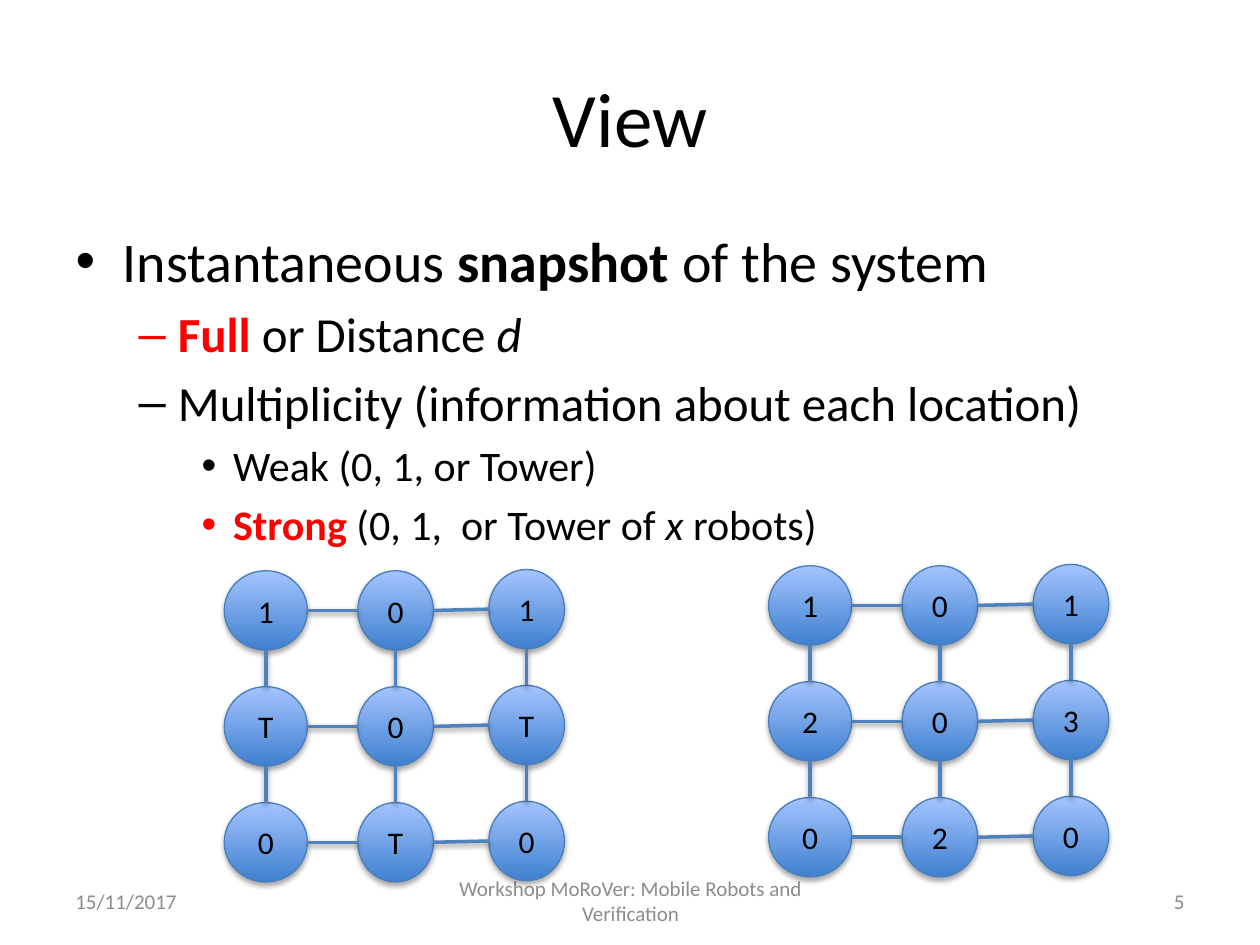
"""Build the slide on robot views: a bulleted outline above two grids of labelled nodes."""
from lxml import etree
from pptx import Presentation, util as u
from pptx.dml.color import RGBColor
from pptx.enum import shapes, text
from pptx.oxml import ns

BLACK = RGBColor(0x00, 0x00, 0x00)
RED = RGBColor(0xFF, 0x00, 0x00)
GREY = RGBColor(0x8C, 0x8C, 0x8C)
NODE_LOW = RGBColor(0x3F, 0x80, 0xCE)
NODE_HIGH = RGBColor(0xA4, 0xC4, 0xFF)
NODE_LINE = RGBColor(0x4B, 0x7E, 0xBC)
EDGE = RGBColor(0x4F, 0x81, 0xBD)
FONT = "Calibri"

COLUMNS = [(0, 0, 0.66), (1.06, 0, 0.6), (2.1, -0.01, 0.6)]
ROW_STEP = 0.92
NODE_HEIGHT = 0.63

OUTLINE = [
    (0, 32, [("Instantaneous ", ""), ("snapshot", "b"), (" of the system", "")]),
    (1, 28, [("Full ", "br"), ("or Distance ", ""), ("d", "i")]),
    (1, 28, [("Multiplicity (information about each location)", "")]),
    (2, 24, [("Weak (0, 1, or Tower)", "")]),
    (2, 24, [("Strong ", "br"), ("(0, 1,  or Tower of", ""), (" x ", "i"), ("robots)", "")]),
]
VIEWS = [
    (6.1, 4.49, ["101", "203", "020"]),
    (1.78, 4.53, ["101", "T0T", "0T0"]),
]
FOOTERS = [
    (0.5, 2.33, "15/11/2017", text.PP_ALIGN.LEFT),
    (3.42, 3.17, "Workshop MoRoVer: Mobile Robots and Verification", text.PP_ALIGN.CENTER),
    (7.17, 2.33, "5", text.PP_ALIGN.RIGHT),
]


def place(shape, left, top, width, height):
    shape.left, shape.top = u.Inches(left), u.Inches(top)
    shape.width, shape.height = u.Inches(width), u.Inches(height)


def style(font, size, color):
    font.name, font.size, font.color.rgb = FONT, u.Pt(size), color


def add_shadow(shape, alpha, distance):
    effects = etree.SubElement(shape._element.spPr, ns.qn("a:effectLst"))
    shadow = etree.SubElement(effects, ns.qn("a:outerShdw"), blurRad="40000",
                              dist=str(u.Pt(distance)), dir="5400000", rotWithShape="0")
    color = etree.SubElement(shadow, ns.qn("a:srgbClr"), val=str(BLACK))
    etree.SubElement(color, ns.qn("a:alpha"), val=str(alpha * 1000))


def fill_title(s, title):
    sp = s.shapes.title
    place(sp, 0.5, 0.3, 9, 1.25)
    sp.text_frame.text = title
    style(sp.text_frame.paragraphs[0].font, 44, BLACK)


def fill_outline(s):
    sp = s.placeholders[1]
    place(sp, 0.5, 1.75, 9, 2.84)
    tf = sp.text_frame
    tf.auto_size = text.MSO_AUTO_SIZE.NONE
    for i, (level, size, runs) in enumerate(OUTLINE):
        p = tf.add_paragraph() if i else tf.paragraphs[0]
        p.level = level
        for words, marks in runs:
            r = p.add_run()
            r.text = words
            style(r.font, size, RED if "r" in marks else BLACK)
            r.font.bold, r.font.italic = "b" in marks, "i" in marks


def add_footer(s, left, width, words, align):
    sp = s.shapes.add_textbox(0, 0, 0, 0)
    place(sp, left, 6.95, width, 0.4)
    tf = sp.text_frame
    tf.word_wrap = True
    tf.vertical_anchor = text.MSO_ANCHOR.MIDDLE
    p = tf.paragraphs[0]
    p.text, p.alignment = words, align
    style(p.font, 12, GREY)


def add_node(s, left, top, width, label):
    sp = s.shapes.add_shape(shapes.MSO_SHAPE.OVAL, 0, 0, 0, 0)
    place(sp, left, top, width, NODE_HEIGHT)
    sp.fill.gradient()
    sp.fill.gradient_angle = 90
    for stop, color in zip(sp.fill.gradient_stops, (NODE_LOW, NODE_HIGH)):
        stop.color.rgb = color
    sp.line.color.rgb, sp.line.width = NODE_LINE, u.Pt(0.75)
    add_shadow(sp, 35, 1.8)
    tf = sp.text_frame
    tf.vertical_anchor = text.MSO_ANCHOR.MIDDLE
    p = tf.paragraphs[0]
    p.text, p.alignment = label, text.PP_ALIGN.CENTER
    style(p.font, 18, BLACK)
    return sp


def add_edge(s, x1, y1, x2, y2):
    line = s.shapes.add_connector(shapes.MSO_CONNECTOR.STRAIGHT, x1, y1, x2, y2)
    line.line.color.rgb, line.line.width = EDGE, u.Pt(2)
    add_shadow(line, 38, 1.6)


def join_across(s, a, b):
    add_edge(s, a.left + a.width, a.top + a.height // 2, b.left, b.top + b.height // 2)


def join_down(s, a, b):
    add_edge(s, a.left + a.width // 2, a.top + a.height, b.left + b.width // 2, b.top)


def add_view(s, left, top, labels):
    rows = [[add_node(s, left + dx, top + i * ROW_STEP + dy, width, label)
             for (dx, dy, width), label in zip(COLUMNS, row)]
            for i, row in enumerate(labels)]
    for join, lanes in ((join_across, rows), (join_down, zip(*rows))):
        for lane in lanes:
            for a, b in zip(lane, lane[1:]):
                join(s, a, b)


def main():
    prs = Presentation()
    prs.slide_width, prs.slide_height = u.Inches(10), u.Inches(7.5)
    s = prs.slides.add_slide(prs.slide_layouts[1])
    fill_title(s, "View")
    fill_outline(s)
    for footer in FOOTERS:
        add_footer(s, *footer)
    for view in VIEWS:
        add_view(s, *view)
    prs.save("out.pptx")


if __name__ == "__main__":
    main()
